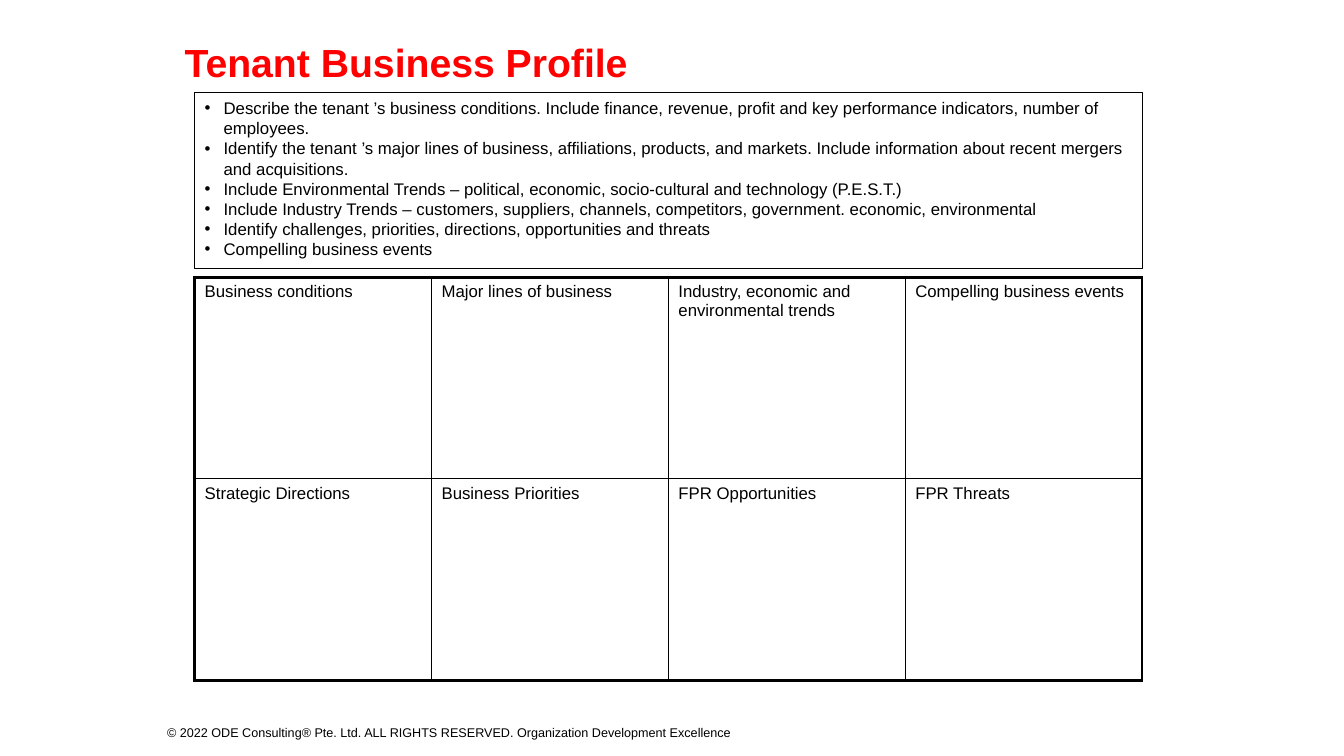
from lxml import etree
from pptx import Presentation
from pptx.dml.color import RGBColor
from pptx.enum import text
from pptx.oxml import ns
from pptx.util import Pt

COLORS = {"title": "FF0000", "ink": "000000"}
FONT = "Arial"
LEFT, WIDTH = 139, 676.8
THIN, THICK = 1, 2.25

GUIDELINES = [
    "Describe the tenant ’s business conditions. Include finance, revenue, profit and key performance indicators, number of employees.",
    "Identify the tenant ’s major lines of business, affiliations, products, and markets. Include information about recent mergers and acquisitions.",
    "Include Environmental Trends – political, economic, socio-cultural and technology (P.E.S.T.)",
    "Include Industry Trends – customers, suppliers, channels, competitors, government. economic, environmental",
    "Identify challenges, priorities, directions, opportunities and threats",
    "Compelling business events",
]
PROFILE = [
    ["Business conditions", "Major lines of business",
     "Industry, economic and environmental trends", "Compelling business events"],
    ["Strategic Directions", "Business Priorities", "FPR Opportunities", "FPR Threats"],
]
COPYRIGHT = "© 2022 ODE Consulting® Pte. Ltd. ALL RIGHTS RESERVED. Organization Development Excellence"


def rgb(name):
    return RGBColor.from_string(COLORS[name])


def style(p, size, color="ink", bold=False):
    p.alignment = text.PP_ALIGN.LEFT
    for r in p.runs:
        r.font.name = FONT
        r.font.size = Pt(size)
        r.font.bold = bold
        r.font.color.rgb = rgb(color)


def place(sp, left, top, width, height):
    sp.left, sp.top, sp.width, sp.height = Pt(left), Pt(top), Pt(width), Pt(height)


def add_title(s, title):
    sp = s.shapes.title
    place(sp, 131.8, 23.8, 648, 44.6)
    tf = sp.text_frame
    tf.text = title
    tf.auto_size = text.MSO_AUTO_SIZE.NONE
    tf.vertical_anchor = text.MSO_ANCHOR.MIDDLE
    tf.margin_left = tf.margin_right = tf.margin_top = tf.margin_bottom = 0
    p = tf.paragraphs[0]
    p.line_spacing = 0.9
    style(p, 28, "title", bold=True)


def add_bullet(p, indent):
    pPr = p._p.get_or_add_pPr()
    pPr.set("marL", str(Pt(indent)))
    pPr.set("indent", str(-Pt(indent)))
    etree.SubElement(pPr, ns.qn("a:buFont"), typeface=FONT)
    etree.SubElement(pPr, ns.qn("a:buChar"), char="•")


def add_guidelines(s, items):
    sp = s.placeholders[1]
    place(sp, LEFT, 66.3, WIDTH, 125.3)
    sp.line.color.rgb = rgb("ink")
    sp.line.width = Pt(0.75)
    tf = sp.text_frame
    tf.text = "\n".join(items)
    tf.auto_size = text.MSO_AUTO_SIZE.NONE
    tf.vertical_anchor = text.MSO_ANCHOR.TOP
    for p in tf.paragraphs:
        add_bullet(p, 13.5)
        p.space_before = Pt(0)
        style(p, 12)


def add_border(cell, side, width):
    tcPr = cell._tc.get_or_add_tcPr()
    ln = etree.SubElement(tcPr, ns.qn(f"a:ln{side}"), w=str(Pt(width)))
    fill = etree.SubElement(ln, ns.qn("a:solidFill"))
    etree.SubElement(fill, ns.qn("a:srgbClr"), val=COLORS["ink"])


def add_profile_table(s, rows):
    n_rows, n_cols = len(rows), len(rows[0])
    frame = s.shapes.add_table(n_rows, n_cols, Pt(LEFT), Pt(198), Pt(WIDTH), Pt(288))
    table = frame.table
    table.first_row = table.horz_banding = False
    for i, row in enumerate(rows):
        for j, label in enumerate(row):
            cell = table.cell(i, j)
            cell.text = label
            style(cell.text_frame.paragraphs[0], 12)
            outer = {"L": j == 0, "R": j == n_cols - 1, "T": i == 0, "B": i == n_rows - 1}
            for side, is_outer in outer.items():
                add_border(cell, side, THICK if is_outer else THIN)
            cell.fill.background()


def add_copyright(s, line):
    sp = s.shapes.add_textbox(Pt(112.3), Pt(514), Pt(530.6), Pt(18))
    tf = sp.text_frame
    tf.word_wrap = True
    tf.vertical_anchor = text.MSO_ANCHOR.MIDDLE
    tf.text = line
    style(tf.paragraphs[0], 9)


def main():
    prs = Presentation()
    prs.slide_width, prs.slide_height = Pt(960), Pt(540)
    s = prs.slides.add_slide(prs.slide_layouts[1])
    add_copyright(s, COPYRIGHT)
    add_guidelines(s, GUIDELINES)
    add_title(s, "Tenant Business Profile")
    add_profile_table(s, PROFILE)
    prs.save("out.pptx")


if __name__ == "__main__":
    main()
